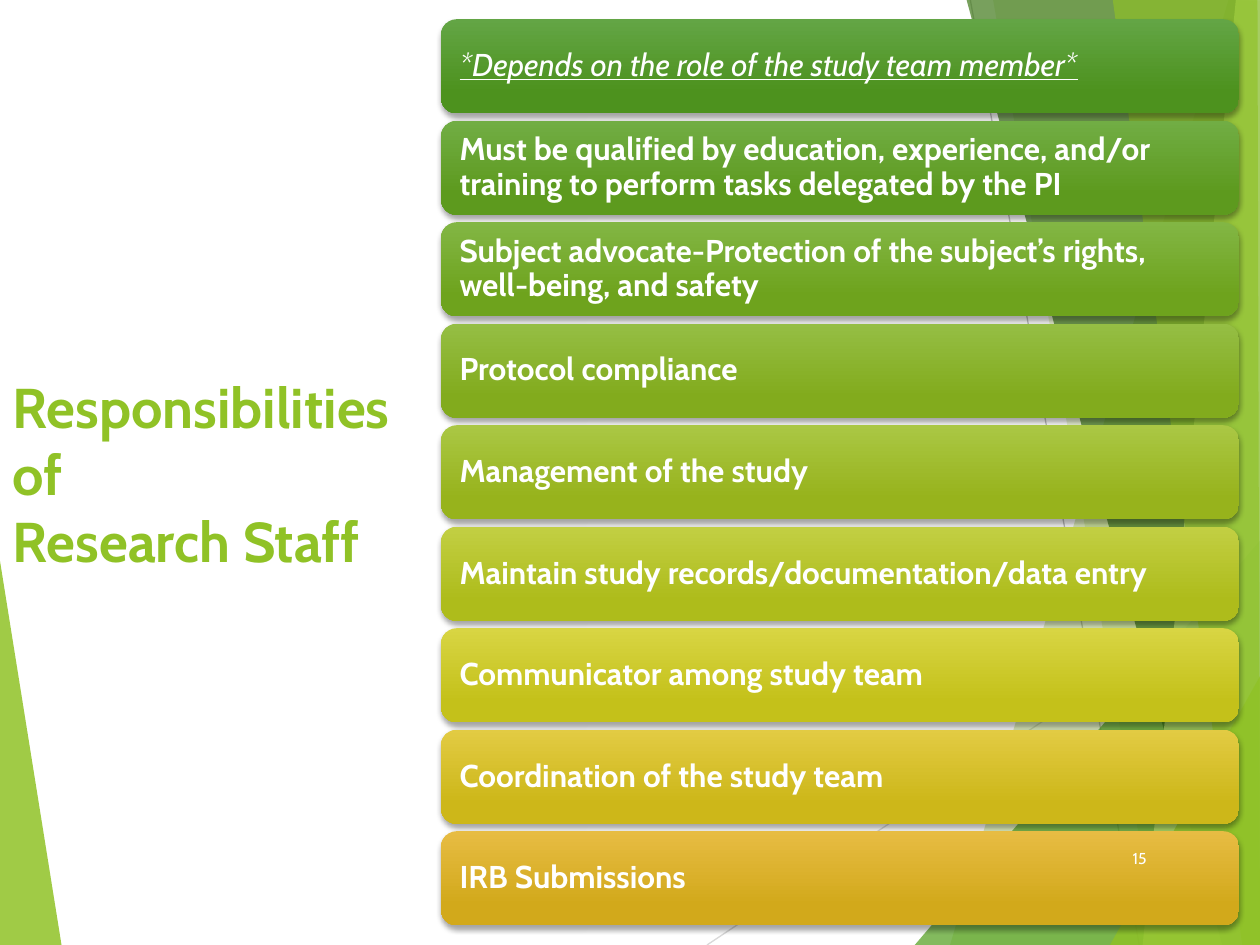
from dataclasses import dataclass

from lxml import etree
from pptx import Presentation
from pptx.dml.color import RGBColor
from pptx.enum.shapes import MSO_CONNECTOR, MSO_SHAPE
from pptx.enum.text import MSO_ANCHOR, PP_ALIGN
from pptx.oxml.ns import qn
from pptx.util import Pt

LINE = MSO_CONNECTOR.STRAIGHT
ROUNDED = MSO_SHAPE.ROUNDED_RECTANGLE
MIDDLE = MSO_ANCHOR.MIDDLE
LEFT, RIGHT = PP_ALIGN.LEFT, PP_ALIGN.RIGHT

FONT = "Cabin"
GREEN, WHITE = "90C226", "FFFFFF"
W, H = 720, 540
EDGE = 720.7  # the facets bleed slightly past the slide


@dataclass
class Facet:
    color: str
    alpha: int
    points: list[tuple[float, float]]


@dataclass
class Ray:
    color: str
    start: tuple[float, float]
    end: tuple[float, float]


@dataclass
class Bar:
    text: str
    top_color: str
    bottom_color: str
    is_note: bool = False


BACKDROP = [
    Facet(GREEN, 85, [(-0.7, 316), (35.3, 540.7), (-0.7, H)]),
    Ray("D9D9D9", (404, H), (EDGE, 329)),
    Ray("BFBFBF", (554.5, 0), (651, H)),
    Facet(GREEN, 30, [(702, 0), (542.9, H), (721.4, 540.7), (EDGE, 0.7)]),
    Facet(GREEN, 20, [(567.4, -0.7), (661.7, H), (EDGE, H), (EDGE, -0.7)]),
    Facet("54A021", 72, [(522.7, H), (W, 308.9), (EDGE, H)]),
    Facet("3F7819", 70, [(552.2, -0.7), (698.4, H), (EDGE, H), (EDGE, -0.7)]),
    Facet("C0E474", 70, [(706.3, -0.7), (653, H), (EDGE, H), (W, -0.7)]),
    Facet(GREEN, 65, [(635.8, -0.7), (709.9, H), (W, H), (718.6, -0.7)]),
    Facet(GREEN, 80, [(634.3, H), (EDGE, 385.2), (EDGE, H)]),
]

BARS = [
    Bar("*Depends on the role of the study team member*", "63A545", "4D921E", True),
    Bar("Must be qualified by education, experience, and/or training to perform "
        "tasks delegated by the PI", "71AD44", "5D9A1E"),
    Bar("Subject advocate-Protection of the subject’s rights, well-being, and safety",
        "82B644", "6EA31D"),
    Bar("Protocol compliance", "95BE44", "82AB1D"),
    Bar("Management of the study", "AAC744", "97B31C"),
    Bar("Maintain study records/documentation/data entry", "C2CF43", "AEBC1B"),
    Bar("Communicator among study team", "D8D543", "C4C11A"),
    Bar("Coordination of the study team", "E2CB43", "CDB719"),
    Bar("IRB Submissions", "E7BC43", "D2A91B"),
]
BAR_LEFT, BAR_TOP, BAR_W, BAR_H, BAR_PITCH = 252, 11, 456, 53.8, 58


def rgb(color: str) -> RGBColor:
    return RGBColor.from_string(color)


def add_run(p, text: str, size: float, color: str, bold=False, note=False):
    r = p.add_run()
    r.text = text
    f = r.font
    f.name, f.size, f.bold = FONT, Pt(size), bold
    f.italic = f.underline = note
    f.color.rgb = rgb(color)


def set_frame(tf, side: float, vertical: float):
    tf.word_wrap = True
    tf.vertical_anchor = MIDDLE
    tf.margin_left = tf.margin_right = Pt(side)
    tf.margin_top = tf.margin_bottom = Pt(vertical)


def add_alpha(color_el, percent: int):
    etree.SubElement(color_el, qn("a:alpha"), val=str(percent * 1000))


def add_facet(s, facet: Facet):
    start, *rest = [(Pt(x), Pt(y)) for x, y in facet.points]
    fb = s.shapes.build_freeform(*start)
    fb.add_line_segments(rest)
    sp = fb.convert_to_shape()
    sp.shadow.inherit = False
    sp.line.fill.background()
    sp.fill.solid()
    sp.fill.fore_color.rgb = rgb(facet.color)
    add_alpha(sp._element.spPr.find(qn("a:solidFill"))[0], facet.alpha)


def add_ray(s, ray: Ray):
    (x1, y1), (x2, y2) = ray.start, ray.end
    cx = s.shapes.add_connector(LINE, Pt(x1), Pt(y1), Pt(x2), Pt(y2))
    cx.line.color.rgb = rgb(ray.color)
    cx.line.width = Pt(0.75)
    etree.SubElement(cx._element.spPr, qn("a:effectLst"))


def add_drop_shadow(sp):
    sp.shadow.inherit = False
    effects = sp._element.spPr.find(qn("a:effectLst"))
    shadow = etree.SubElement(
        effects, qn("a:outerShdw"), blurRad=str(Pt(3)), dist=str(Pt(2)),
        dir=str(90 * 60000), algn="ctr", rotWithShape="0")
    add_alpha(etree.SubElement(shadow, qn("a:srgbClr"), val="000000"), 35)


def add_bar(s, bar: Bar, top: float):
    sp = s.shapes.add_shape(ROUNDED, Pt(BAR_LEFT), Pt(top), Pt(BAR_W), Pt(BAR_H))
    sp.line.fill.background()
    sp.fill.gradient()
    sp.fill.gradient_angle = 270
    stops = zip(sp.fill.gradient_stops, (0, 0.78), (bar.top_color, bar.bottom_color))
    for stop, position, color in stops:
        stop.position = position
        stop.color.rgb = rgb(color)
    add_drop_shadow(sp)
    set_frame(sp.text_frame, 8, 7.6)
    p = sp.text_frame.paragraphs[0]
    p.alignment = LEFT
    p.line_spacing = 0.9
    add_run(p, bar.text, 18, WHITE, bold=not bar.is_note, note=bar.is_note)


def main():
    prs = Presentation()
    prs.slide_width, prs.slide_height = Pt(W), Pt(H)
    s = prs.slides.add_slide(prs.slide_layouts[5])

    # Faceted backdrop
    for item in BACKDROP:
        if isinstance(item, Ray):
            add_ray(s, item)
        else:
            add_facet(s, item)

    # Title, raised above the backdrop
    title = s.shapes.title
    title._element.getparent().append(title._element)
    title.left, title.top, title.width, title.height = Pt(0), Pt(109), Pt(252), Pt(322.5)
    set_frame(title.text_frame, 7.2, 3.6)
    p = title.text_frame.paragraphs[0]
    p.alignment = LEFT
    add_run(p, "Responsibilities of ", 32, GREEN, bold=True)
    p.add_line_break()
    add_run(p, "Research Staff", 32, GREEN, bold=True)

    # Responsibility bars
    for i, bar in enumerate(BARS):
        add_bar(s, bar, BAR_TOP + i * BAR_PITCH)

    # Slide number
    number = s.shapes.add_textbox(Pt(622), Pt(476), Pt(40.3), Pt(28.8))
    set_frame(number.text_frame, 7.2, 3.6)
    p = number.text_frame.paragraphs[0]
    p.alignment = RIGHT
    add_run(p, "15", 9, WHITE)

    prs.save("out.pptx")


if __name__ == "__main__":
    main()
